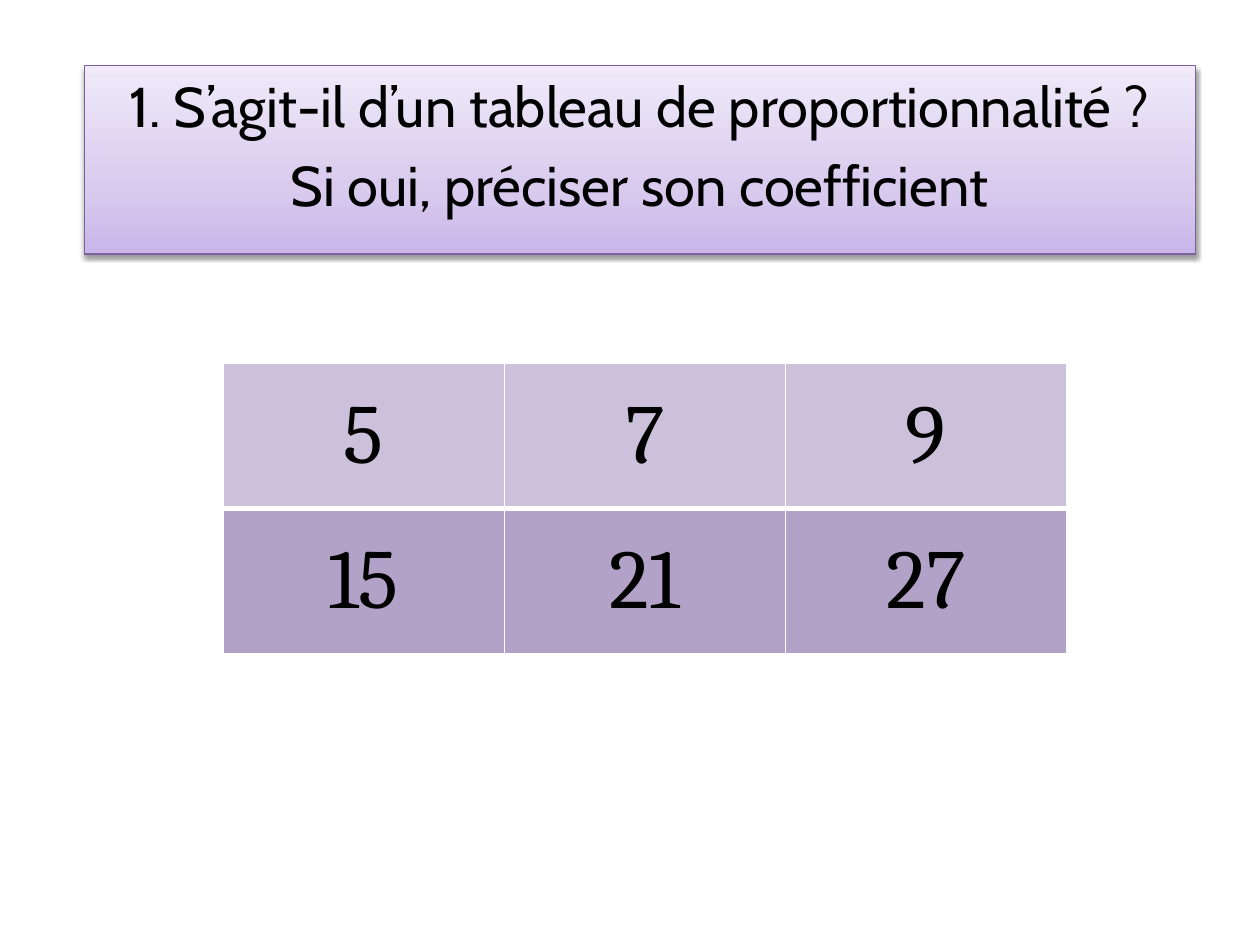
import copy

import pptx
import pptx.dml.color
import pptx.enum.text
import pptx.oxml
import pptx.oxml.ns
import pptx.util

Cm = pptx.util.Cm
Pt = pptx.util.Pt

COLOURS = {
    "text": "000000",
    "border": "FFFFFF",
    "outline": "7D60A0",
    "first row": "CCC1DA",
    "second row": "B3A2C7",
}
TITLE_GRADIENT = [(0, "C9B5E8"), (0.35, "D8CBEE"), (1, "F0EAF9")]
QUESTION = [
    "1. S’agit-il d’un tableau de proportionnalité ?",
    "Si oui, préciser son coefficient",
]
VALUES = [("5", "7", "9"), ("15", "21", "27")]
ROW_COLOURS = ["first row", "second row"]


def rgb(hex_colour):
    return pptx.dml.color.RGBColor.from_string(hex_colour)


def parse(markup):
    namespace = pptx.oxml.ns.nsdecls("a")
    return pptx.oxml.parse_xml(markup.replace(" NS", f" {namespace}", 1))


class SlideBuilder:
    title_font = "Cabin"
    title_size = Pt(32)
    value_font = "Cambria"
    value_size = Pt(48)

    def __init__(self, slide):
        self.slide = slide

    def style_paragraph(self, paragraph, font_name, size):
        paragraph.alignment = pptx.enum.text.PP_ALIGN.CENTER
        paragraph.font.name = font_name
        paragraph.font.size = size
        paragraph.font.color.rgb = rgb(COLOURS["text"])

    def add_gradient(self, fill, stops):
        fill.gradient()
        fill.gradient_angle = 90
        stop_list = fill._xPr.find(".//" + pptx.oxml.ns.qn("a:gsLst"))
        stop_list.append(copy.deepcopy(stop_list[0]))
        for stop, (position, colour) in zip(fill.gradient_stops, stops):
            stop.position = position
            stop.color.rgb = rgb(colour)

    def add_shadow(self, shape):
        shape._element.spPr.append(parse(
            '<a:effectLst NS><a:outerShdw blurRad="40000" dist="20000" dir="5400000" rotWithShape="0">'
            f'<a:srgbClr val="{COLOURS["text"]}"><a:alpha val="38000"/></a:srgbClr>'
            "</a:outerShdw></a:effectLst>"
        ))

    def title(self, lines, left, top, width, height):
        box = self.slide.shapes.title
        box.left, box.top, box.width, box.height = left, top, width, height
        self.add_gradient(box.fill, TITLE_GRADIENT)
        box.line.color.rgb = rgb(COLOURS["outline"])
        box.line.width = Pt(0.75)
        self.add_shadow(box)
        frame = box.text_frame
        frame.text = "\n".join(lines)
        frame.word_wrap = True
        frame.auto_size = pptx.enum.text.MSO_AUTO_SIZE.NONE
        frame.vertical_anchor = pptx.enum.text.MSO_ANCHOR.TOP
        for paragraph in frame.paragraphs:
            self.style_paragraph(paragraph, self.title_font, self.title_size)
            paragraph.space_before = Pt(6.4)

    def add_borders(self, cell, widths):
        properties = cell._tc.get_or_add_tcPr()
        for side, width in zip("LRTB", widths):
            properties.append(parse(
                f'<a:ln{side} NS w="{Pt(width)}"><a:solidFill>'
                f'<a:srgbClr val="{COLOURS["border"]}"/></a:solidFill></a:ln{side}>'
            ))

    def table(self, rows, left, top, width, height):
        frame = self.slide.shapes.add_table(len(rows), len(rows[0]), left, top, width, height)
        table = frame.table
        table.first_row = False
        table.horz_banding = False
        border_widths = [(1, 1, 1, 3), (1, 1, 3, 1)]
        for row_index, values in enumerate(rows):
            for column_index, value in enumerate(values):
                cell = table.cell(row_index, column_index)
                cell.text = value
                cell.vertical_anchor = pptx.enum.text.MSO_ANCHOR.MIDDLE
                self.add_borders(cell, border_widths[row_index])
                cell.fill.solid()
                cell.fill.fore_color.rgb = rgb(COLOURS[ROW_COLOURS[row_index]])
                self.style_paragraph(cell.text_frame.paragraphs[0], self.value_font, self.value_size)


def main():
    deck = pptx.Presentation()
    deck.slide_width, deck.slide_height = Cm(25.4), Cm(19.05)
    builder = SlideBuilder(deck.slides.add_slide(deck.slide_layouts[5]))
    builder.title(QUESTION, Cm(1.7), Cm(1.32), Cm(22.4), Cm(3.8))
    builder.table(VALUES, Cm(4.5), Cm(7.32), Cm(17), Cm(5.86))
    deck.save("out.pptx")


if __name__ == "__main__":
    main()
